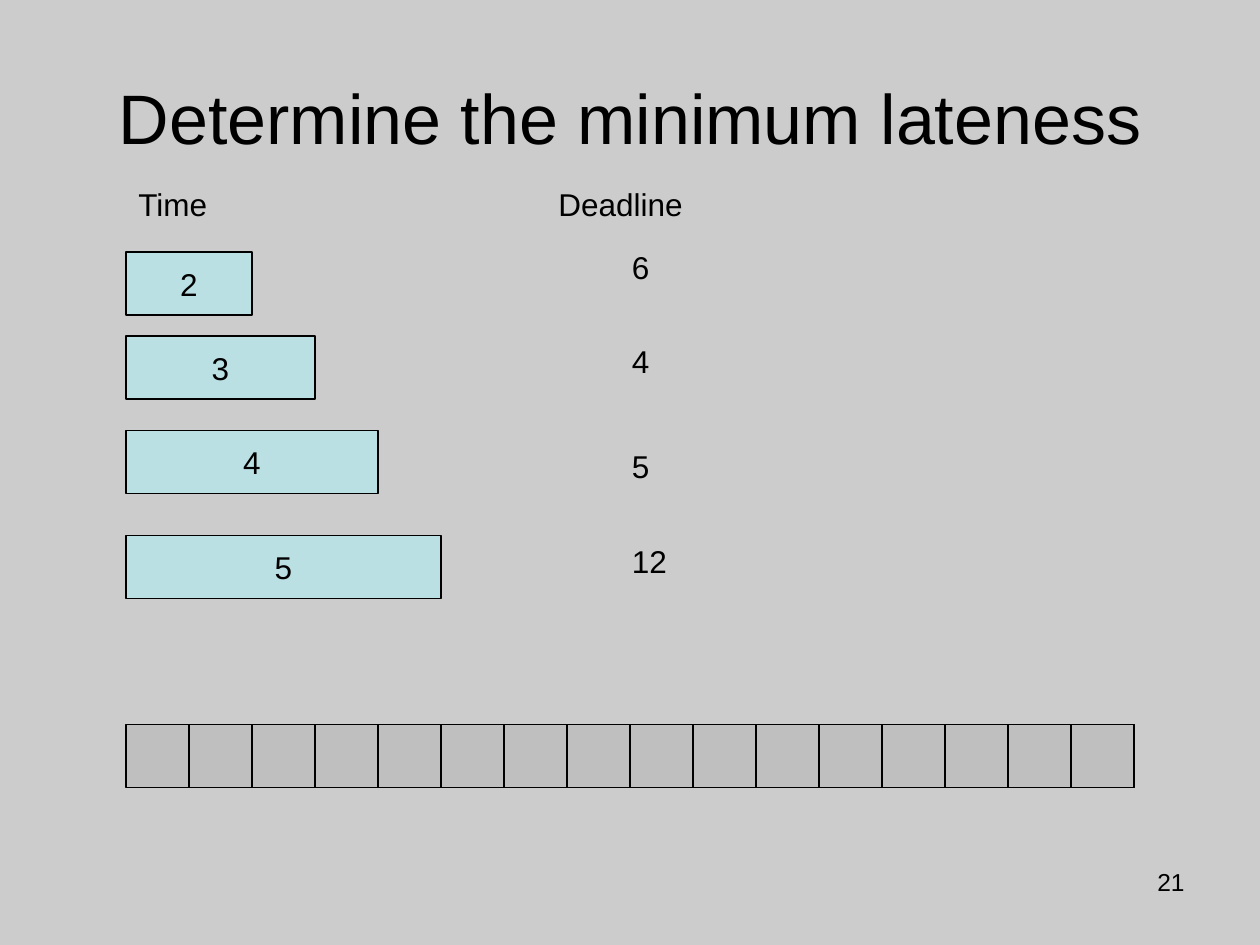
from pptx import Presentation
from pptx.dml.color import RGBColor
from pptx.enum.shapes import MSO_SHAPE
from pptx.enum.text import MSO_ANCHOR, MSO_AUTO_SIZE, PP_ALIGN
from pptx.util import Pt

PX = 7620
UNIT = 60
RECT = MSO_SHAPE.RECTANGLE
MID, TOP = MSO_ANCHOR.MIDDLE, MSO_ANCHOR.TOP
GROW = MSO_AUTO_SIZE.SHAPE_TO_FIT_TEXT
LEFT, CENTER, RIGHT = PP_ALIGN.LEFT, PP_ALIGN.CENTER, PP_ALIGN.RIGHT
BLACK = RGBColor(0x00, 0x00, 0x00)
GREY = RGBColor(0xCC, 0xCC, 0xCC)
SLOT = RGBColor(0xBF, 0xBF, 0xBF)
BLUE = RGBColor(0xBB, 0xE0, 0xE3)
FONT = "Arial"
JOBS = [(2, 6, 240, 230), (3, 4, 320, 320), (4, 5, 410, 420), (5, 12, 510, 510)]


def emu(*box):
    """Turn px lengths into EMU."""
    return [n * PX for n in box]


def write(shape, text, size=18, align=LEFT, anchor=TOP, wrap=True):
    """Put one styled line of text into a shape."""
    frame = shape.text_frame
    frame.text = text
    frame.word_wrap = wrap
    frame.vertical_anchor = anchor
    line = frame.paragraphs[0]
    line.alignment = align
    font = line.runs[0].font
    font.name, font.size = FONT, Pt(size)
    font.color.rgb = BLACK


def label(slide, box, text, grow=False, **style):
    """Add a text box."""
    shape = slide.shapes.add_textbox(*emu(*box))
    write(shape, text, **style)
    if grow:
        shape.text_frame.auto_size = GROW


def block(slide, box, fill, width):
    """Add an outlined rectangle and return it."""
    shape = slide.shapes.add_shape(RECT, *emu(*box))
    shape.shadow.inherit = False
    shape.fill.solid()
    shape.fill.fore_color.rgb = fill
    shape.line.color.rgb = BLACK
    shape.line.width = Pt(width)
    return shape


def heads(slide, x, y):
    """Add the two column headings."""
    for dx, text in ((0, "Time"), (400, "Deadline")):
        label(slide, (x + dx, y, 230, 48), text, grow=True)


def jobs(slide, x):
    """Add a bar as long as its time, and a deadline, for each job."""
    for time, due, top, mark in JOBS:
        bar = block(slide, (x, top, time * UNIT, UNIT), BLUE, 0.75)
        write(bar, str(time), align=CENTER, anchor=MID, wrap=False)
        wide = 24 + 17 * len(str(due))
        label(slide, (x + 470, mark, wide, 48), str(due), grow=True, wrap=False)


def track(slide, x, y, count):
    """Add the empty time line, with every second slot on a long bar."""
    block(slide, (x, y, count * UNIT, UNIT), SLOT, 1)
    for i in range(1, count, 2):
        block(slide, (x + i * UNIT, y, UNIT, UNIT), SLOT, 1)


def main():
    """Build the slide and save it."""
    deck = Presentation()
    deck.slide_width, deck.slide_height = emu(1200, 900)
    slide = deck.slides.add_slide(deck.slide_layouts[6])
    back = slide.background.fill
    back.solid()
    back.fore_color.rgb = GREY
    label(slide, (60, 36, 1080, 150), "Determine the minimum lateness",
          size=40, align=CENTER, anchor=MID)
    heads(slide, 120, 170)
    jobs(slide, 120)
    track(slide, 120, 690, 16)
    label(slide, (860, 820, 280, 62), "21", size=14, align=RIGHT)
    deck.save("out.pptx")


if __name__ == "__main__":
    main()
